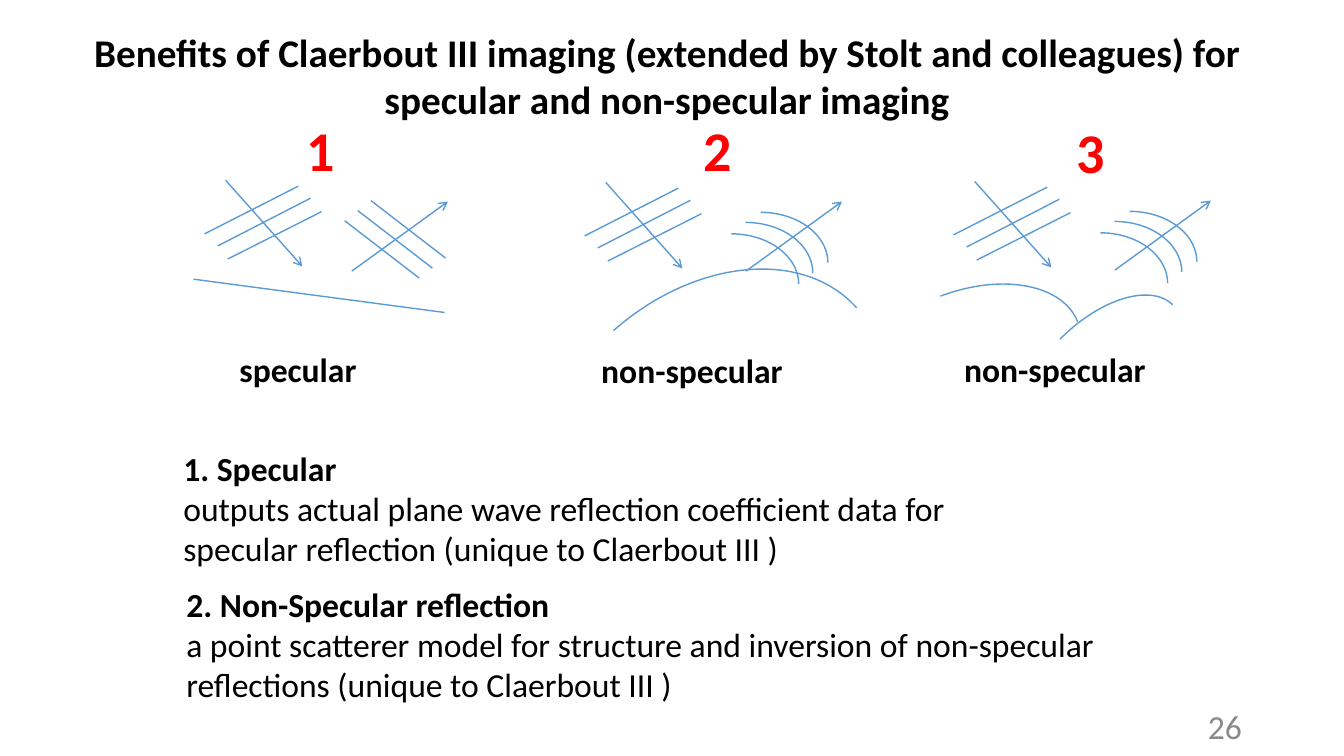
import lxml.etree
import pptx
import pptx.dml.color
import pptx.enum.shapes
import pptx.enum.text
import pptx.oxml.ns
import pptx.util

THEME = {
    "font": "Calibri",
    "black": pptx.dml.color.RGBColor.from_string("000000"),
    "red": pptx.dml.color.RGBColor.from_string("FF0000"),
    "gray": pptx.dml.color.RGBColor.from_string("898989"),
    "blue": pptx.dml.color.RGBColor.from_string("5B9BD5"),
    "title": pptx.util.Pt(28),
    "number": pptx.util.Pt(40),
    "body": pptx.util.Pt(24),
    "line": pptx.util.Pt(1),
}
LEFT, CENTER, RIGHT = (
    pptx.enum.text.PP_ALIGN.LEFT,
    pptx.enum.text.PP_ALIGN.CENTER,
    pptx.enum.text.PP_ALIGN.RIGHT,
)

presentation = pptx.Presentation()
presentation.slide_width = pptx.util.Inches(40 / 3)
presentation.slide_height = pptx.util.Inches(7.5)
slide = presentation.slides.add_slide(presentation.slide_layouts[6])
# Square grid: 40 columns by 22.5 rows
CELL = presentation.slide_width / 40


def add_text(box, lines, size, color="black", align=LEFT, bold_lines=1):
    """Write one paragraph per line; the first bold_lines of them are bold."""
    shape = slide.shapes.add_textbox(*(round(value * CELL) for value in box))
    frame = shape.text_frame
    frame.word_wrap = True
    frame.text = "\n".join(lines)
    for index, paragraph in enumerate(frame.paragraphs):
        paragraph.alignment = align
        paragraph.font.name = THEME["font"]
        paragraph.font.size = THEME[size]
        paragraph.font.color.rgb = THEME[color]
        paragraph.font.bold = index < bold_lines


def add_ray(start, end, origin=(0, 0), arrow=False):
    """Draw a line between two grid points measured from origin."""
    points = [round((a + b) * CELL) for point in (start, end) for a, b in zip(point, origin)]
    line = slide.shapes.add_connector(pptx.enum.shapes.MSO_CONNECTOR.STRAIGHT, *points)
    line.line.color.rgb = THEME["blue"]
    line.line.width = THEME["line"]
    properties = line._element.spPr
    if arrow:
        outline = properties.find(pptx.oxml.ns.qn("a:ln"))
        lxml.etree.SubElement(outline, pptx.oxml.ns.qn("a:tailEnd"), type="arrow")
    lxml.etree.SubElement(properties, pptx.oxml.ns.qn("a:effectLst"))


add_text(
    (1.14, 0.69, 37.41, 3.12),
    ["Benefits of Claerbout III imaging (extended by Stolt and colleagues) for "
     "specular and non-specular imaging"],
    "title", align=CENTER,
)

# Panels: origin of the incident ray, number position, label position, label, start of the reflected ray
panels = [
    ((6.72, 5.37), (8.05, 3.3), (6.83, 10.23), "specular", (3.75, 2.7)),
    ((18.03, 5.43), (19.85, 3.3), (17.6, 10.26), "non-specular", (4.17, 2.64)),
    ((29.01, 5.4), (30.97, 3.36), (28.4, 10.23), "non-specular", (4.17, 2.64)),
]
incident_fronts = [
    ((2.16, 0.17), (-0.63, 1.59)),
    ((2.52, 0.53), (-0.24, 1.95)),
    ((2.85, 0.93), (0.06, 2.34)),
]
curved_fronts = [(2.61, 0.89), (2.16, 1.19), (1.74, 1.53)]

# Arcs: left, top, width, height, rotation; the curved reflectors come first
arcs = [
    (15.24, 8.76, 11.73, 8.58, 318.5),
    (25.23, 8.67, 7.08, 4.35, 339.1),
    (29.64, 9.6, 6.18, 3.33, 314.8),
]

add_ray((5.76, 8.31), (13.23, 9.3))
for number, (origin, number_at, label_at, label, reflected) in enumerate(panels, 1):
    add_ray((0, 0), (2.28, 2.56), origin, arrow=True)
    for start, end in incident_fronts:
        add_ray(start, end, origin)
    add_ray(reflected, (reflected[0] + 2.86, reflected[1] - 2.07), origin, arrow=True)
    if label == "specular":
        for step in range(3):
            shift = (origin[0] - 0.39 * step, origin[1] + 0.3 * step)
            add_ray((4.32, 0.6), (6.54, 2.31), shift)
    else:
        arcs += [(origin[0] + x, origin[1] + y, 4, 3, 0) for x, y in curved_fronts]
    add_text((*number_at, 3, 2.31), [str(number)], "number", "red", CENTER)
    add_text((*label_at, 6.6, 1.5), [label], "body")

for *box, rotation in arcs:
    arc = slide.shapes.add_shape(
        pptx.enum.shapes.MSO_SHAPE.ARC, *(round(value * CELL) for value in box)
    )
    arc.rotation = rotation
    arc.shadow.inherit = False
    arc.fill.background()
    arc.line.color.rgb = THEME["blue"]
    arc.line.width = THEME["line"]

add_text(
    (5.16, 13.17, 23.73, 3.93),
    ["1. Specular",
     "outputs actual plane wave reflection coefficient data for",
     "specular reflection (unique to Claerbout III )"],
    "body",
)
add_text(
    (5.25, 17.22, 30.87, 3.93),
    ["2. Non-Specular reflection",
     "a point scatterer model for structure and inversion of non-specular "
     "reflections (unique to Claerbout III )"],
    "body",
)
add_text((28.26, 20.85, 9, 1.2), ["26"], "body", "gray", RIGHT, bold_lines=0)

presentation.save("out.pptx")
